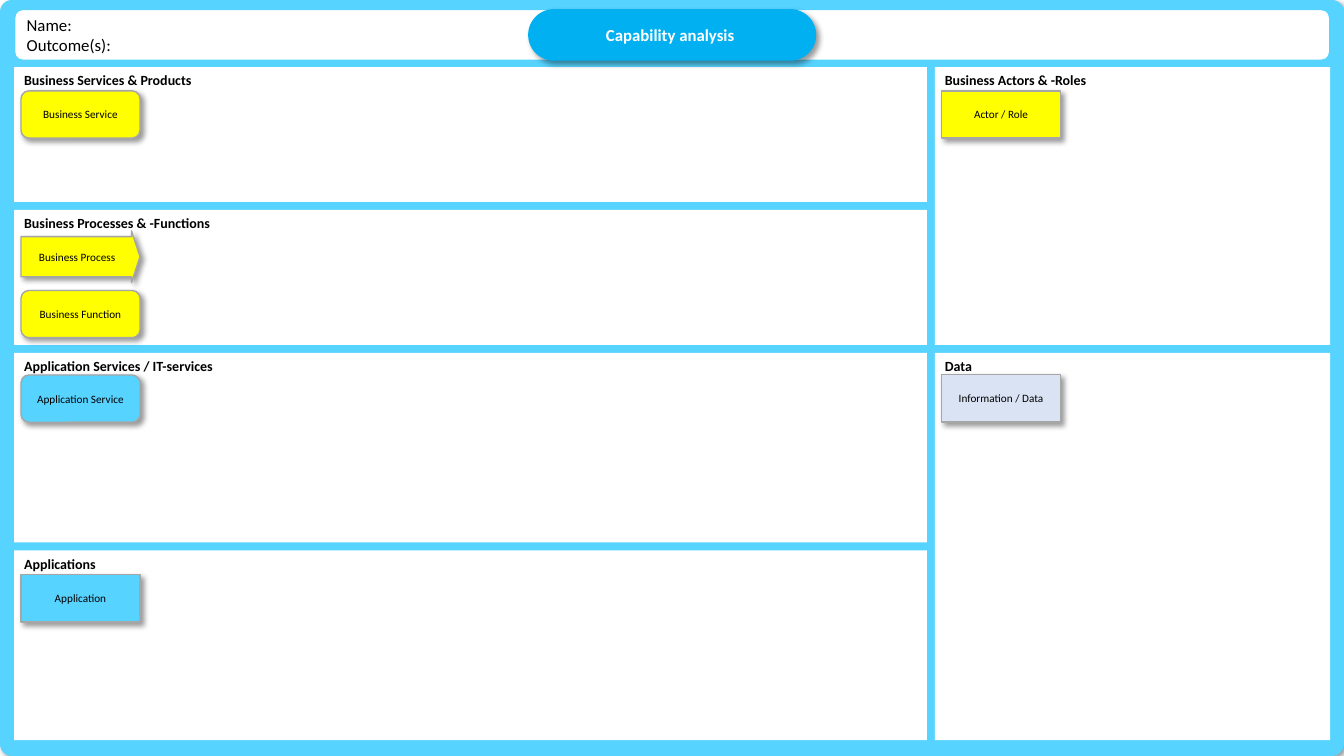
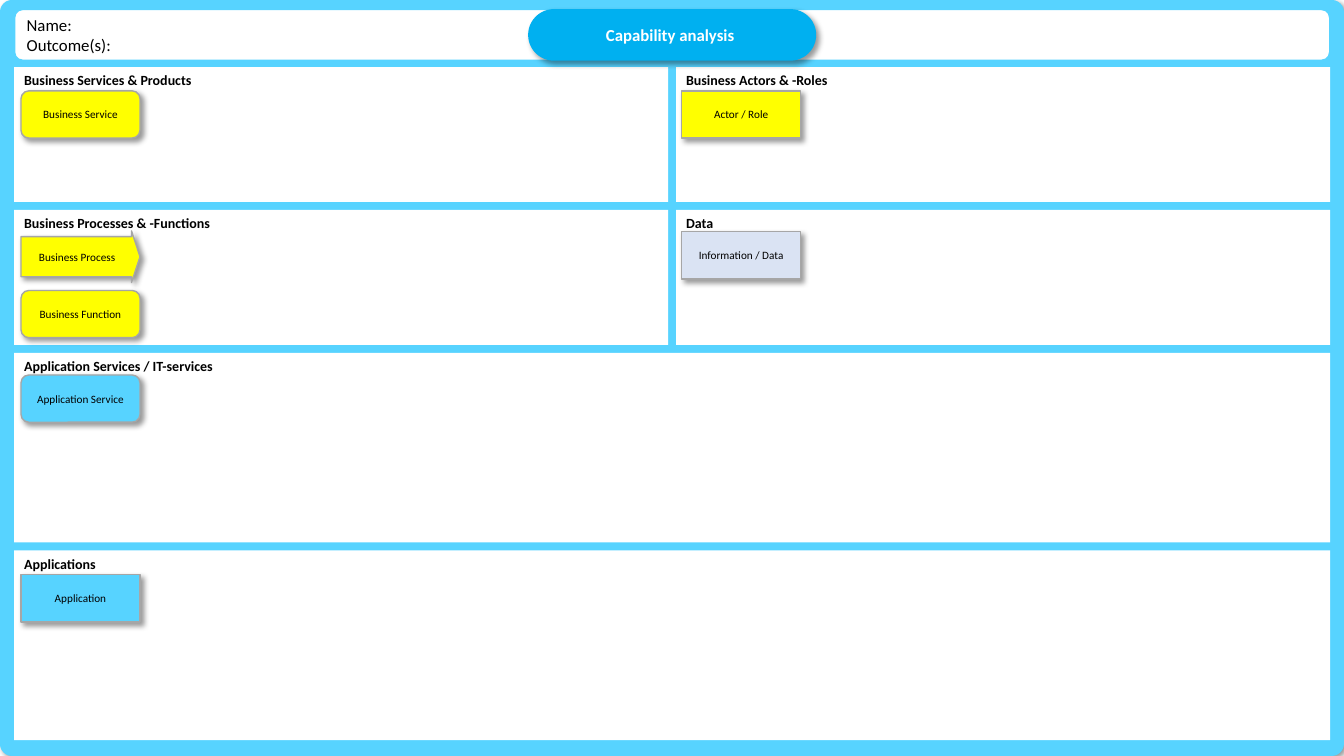
"""Build two capability analysis canvases with differing column layouts."""
from lxml.etree import SubElement
from pptx import Presentation
from pptx.dml.color import RGBColor
from pptx.enum.shapes import MSO_SHAPE as Preset
from pptx.enum.text import MSO_ANCHOR as Anchor, PP_ALIGN as Align
from pptx.oxml.ns import qn
from pptx.util import Cm, Pt

COLORS = {
    "frame": "57D3FF",
    "title": "00B0F0",
    "panel": "FFFFFF",
    "business": "FFFF00",
    "application": "57D3FF",
    "data": "DAE3F3",
    "outline": "A6A6A6",
    "text": "000000",
    "light": "FFFFFF",
}
FONT = "Calibri"
SLIDE_WIDTH, SLIDE_HEIGHT = 33.87, 19.05
LEFT, RIGHT, TOP, GAP = 0.36, 33.52, 1.69, 0.2
ROW_HEIGHTS = [3.4, 3.4, 4.78, 4.78]
CARD_WIDTH, CARD_HEIGHT, ARROW_HEIGHT = 3.0, 1.19, 1.3

ROUNDED = (Preset.ROUNDED_RECTANGLE, [0.1667], CARD_HEIGHT)
SQUARE = (Preset.ROUNDED_RECTANGLE, [0], CARD_HEIGHT)
ARROW = (Preset.RIGHT_ARROW, [0.776, 0.165], ARROW_HEIGHT)

SECTIONS = {
    "services": ("Business Services & Products",
                 [("Business Service", ROUNDED, "business", 0.6)]),
    "processes": ("Business Processes & -Functions",
                  [("Business Process", ARROW, "business", 0.53),
                   ("Business Function", ROUNDED, "business", 2.03)]),
    "it_services": ("Application Services / IT-services",
                    [("Application Service", ROUNDED, "application", 0.56)]),
    "applications": ("Applications",
                     [("Application", SQUARE, "application", 0.61)]),
    "actors": ("Business Actors & -Roles",
               [("Actor / Role", SQUARE, "business", 0.6)]),
    "data": ("Data", [("Information / Data", SQUARE, "data", 0.55)]),
}
LEFT_SECTIONS = ["services", "processes", "it_services", "applications"]

CANVASES = [
    {"left_width": 23.0, "split_rows": 4, "right_inset": 0.17,
     "right": [("actors", 0, 1), ("data", 2, 3)]},
    {"left_width": 16.48, "split_rows": 2, "right_inset": 0.14,
     "right": [("actors", 0, 0), ("data", 1, 1)]},
]


def color(name):
    return RGBColor.from_string(COLORS[name])


def add_shadow(shape):
    effects = shape._element.spPr.find(qn("a:effectLst"))
    shadow = SubElement(effects, qn("a:outerShdw"), blurRad=str(Pt(4)),
                        dist=str(Pt(3)), dir="2700000", algn="tl", rotWithShape="0")
    tint = SubElement(shadow, qn("a:srgbClr"), val=COLORS["text"])
    SubElement(tint, qn("a:alpha"), val="40000")


def add_box(slide, preset, bounds, fill, line=None, line_width=1,
            adjustments=(), shadow=False):
    shape = slide.shapes.add_shape(preset, *map(Cm, bounds))
    for index, value in enumerate(adjustments):
        shape.adjustments[index] = value
    shape.fill.solid()
    shape.fill.fore_color.rgb = color(fill)
    if line:
        shape.line.color.rgb = color(line)
        shape.line.width = Pt(line_width)
    else:
        shape.line.fill.background()
    shape.shadow.inherit = False
    if shadow:
        add_shadow(shape)
    return shape


def write_text(shape, text, size=8, bold=False, ink="text",
               align=Align.CENTER, anchor=Anchor.MIDDLE):
    frame = shape.text_frame
    frame.word_wrap = True
    frame.vertical_anchor = anchor
    frame.text = text
    for paragraph in frame.paragraphs:
        paragraph.alignment = align
        font = paragraph.runs[0].font
        font.name, font.size, font.bold = FONT, Pt(size), bold
        font.color.rgb = color(ink)


def row_top(row):
    return TOP + sum(ROW_HEIGHTS[:row]) + GAP * row


def add_card(slide, left, top, label, style, fill):
    preset, adjustments, height = style
    card = add_box(slide, preset, (left, top, CARD_WIDTH, height), fill,
                   line="outline", adjustments=adjustments, shadow=True)
    write_text(card, label)


def add_section(slide, name, left, width, first_row, last_row, inset=0.17):
    heading, cards = SECTIONS[name]
    top = row_top(first_row)
    height = row_top(last_row) + ROW_HEIGHTS[last_row] - top
    panel = add_box(slide, Preset.RECTANGLE, (left, top, width, height), "panel")
    write_text(panel, heading, size=10, bold=True, align=Align.LEFT, anchor=Anchor.TOP)
    for label, style, fill, drop in cards:
        add_card(slide, left + inset, top + drop, label, style, fill)


def add_frame(slide):
    add_box(slide, Preset.ROUNDED_RECTANGLE, (0, 0, SLIDE_WIDTH, SLIDE_HEIGHT),
            "frame", adjustments=[0.016], shadow=True)


def add_header(slide):
    band = add_box(slide, Preset.ROUNDED_RECTANGLE, (LEFT, 0.23, RIGHT - LEFT, 1.3),
                   "panel", line="frame", line_width=1.5)
    write_text(band, "Name:\nOutcome(s):", size=12, align=Align.LEFT)
    title = add_box(slide, Preset.ROUNDED_RECTANGLE, (13.31, 0.23, 7.26, 1.3),
                    "title", adjustments=[0.5], shadow=True)
    write_text(title, "Capability analysis ", size=12, bold=True, ink="light")


def add_canvas(presentation, left_width, split_rows, right_inset, right):
    slide = presentation.slides.add_slide(presentation.slide_layouts[6])
    add_frame(slide)
    for row, name in enumerate(LEFT_SECTIONS):
        width = left_width if row < split_rows else RIGHT - LEFT
        add_section(slide, name, LEFT, width, row, row)
    right_left = LEFT + left_width + GAP
    for name, first_row, last_row in right:
        add_section(slide, name, right_left, RIGHT - right_left,
                    first_row, last_row, right_inset)
    add_header(slide)


def main():
    presentation = Presentation()
    presentation.slide_width = Cm(SLIDE_WIDTH)
    presentation.slide_height = Cm(SLIDE_HEIGHT)
    for canvas in CANVASES:
        add_canvas(presentation, **canvas)
    presentation.save("out.pptx")


if __name__ == "__main__":
    main()
